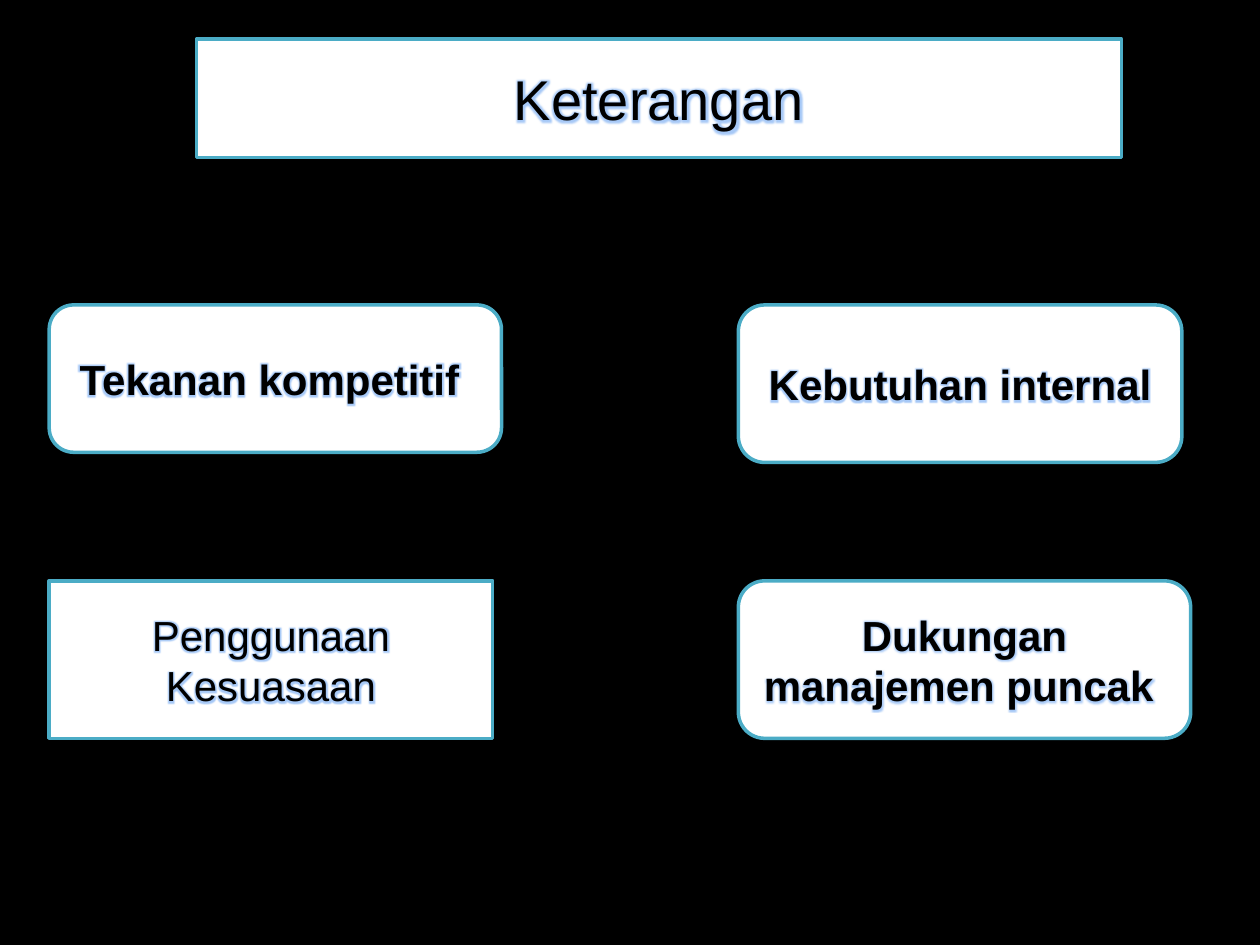
from lxml import etree
from pptx import Presentation
from pptx.dml.color import RGBColor
from pptx.enum.shapes import MSO_SHAPE
from pptx.enum.text import MSO_ANCHOR, MSO_AUTO_SIZE, PP_ALIGN
from pptx.oxml.ns import qn
from pptx.util import Inches, Pt

RECT, ROUND = MSO_SHAPE.RECTANGLE, MSO_SHAPE.ROUNDED_RECTANGLE
MIDDLE, CENTER, NO_FIT = MSO_ANCHOR.MIDDLE, PP_ALIGN.CENTER, MSO_AUTO_SIZE.NONE

BLACK, WHITE, TEAL, GLOW = "000000", "FFFFFF", "4BACC6", "A7C9F7"
TITLE = "Keterangan"
TITLE_BOX = (1.56, 0.31, 7.34, 0.94)
COLS = (0.39, 5.86)
ROWS = (2.42, 4.61)
FACTORS = [
    ("Tekanan kompetitif ", 0, 0, 3.59, 1.17, ROUND, True),
    ("Penggunaan Kesuasaan", 0, 1, 3.52, 1.25, RECT, False),
    ("Dukungan manajemen puncak ", 1, 1, 3.59, 1.25, ROUND, True),
    ("Kebutuhan internal", 1, 0, 3.52, 1.25, ROUND, True),
]


def rgb(color):
    return RGBColor.from_string(color)


def set_attrs(obj, values):
    for name, value in values.items():
        setattr(obj, name, value)


def add_glow(r, radius):
    effects = etree.Element(qn("a:effectLst"))
    glow = etree.SubElement(effects, qn("a:glow"), rad=str(Pt(radius)))
    etree.SubElement(glow, qn("a:srgbClr"), val=GLOW)
    r.font._element.find(qn("a:solidFill")).addnext(effects)


def format_box(sp, text, size, bold, radius):
    sp.fill.solid()
    sp.fill.fore_color.rgb = rgb(WHITE)
    sp.line.color.rgb = rgb(TEAL)
    sp.line.width = Pt(2)
    tf = sp.text_frame
    set_attrs(tf, {"word_wrap": True, "auto_size": NO_FIT, "vertical_anchor": MIDDLE})
    p = tf.paragraphs[0]
    p.alignment = CENTER
    r = p.add_run()
    r.text = text
    set_attrs(r.font, {"name": "Arial", "size": Pt(size), "bold": bold})
    r.font.color.rgb = rgb(BLACK)
    add_glow(r, radius)


def main():
    prs = Presentation()
    set_attrs(prs, {"slide_width": Inches(10), "slide_height": Inches(7.5)})
    s = prs.slides.add_slide(prs.slide_layouts[5])
    s.background.fill.solid()
    s.background.fill.fore_color.rgb = rgb(BLACK)

    title = s.shapes.title
    sides = ("left", "top", "width", "height")
    set_attrs(title, dict(zip(sides, map(Inches, TITLE_BOX))))
    format_box(title, TITLE, 32, False, 5)

    for text, col, row, width, height, kind, bold in FACTORS:
        box = map(Inches, (COLS[col], ROWS[row], width, height))
        sp = s.shapes.add_shape(kind, *box)
        sp.shadow.inherit = False
        format_box(sp, text, 24, bold, 4)

    prs.save("out.pptx")


if __name__ == "__main__":
    main()
